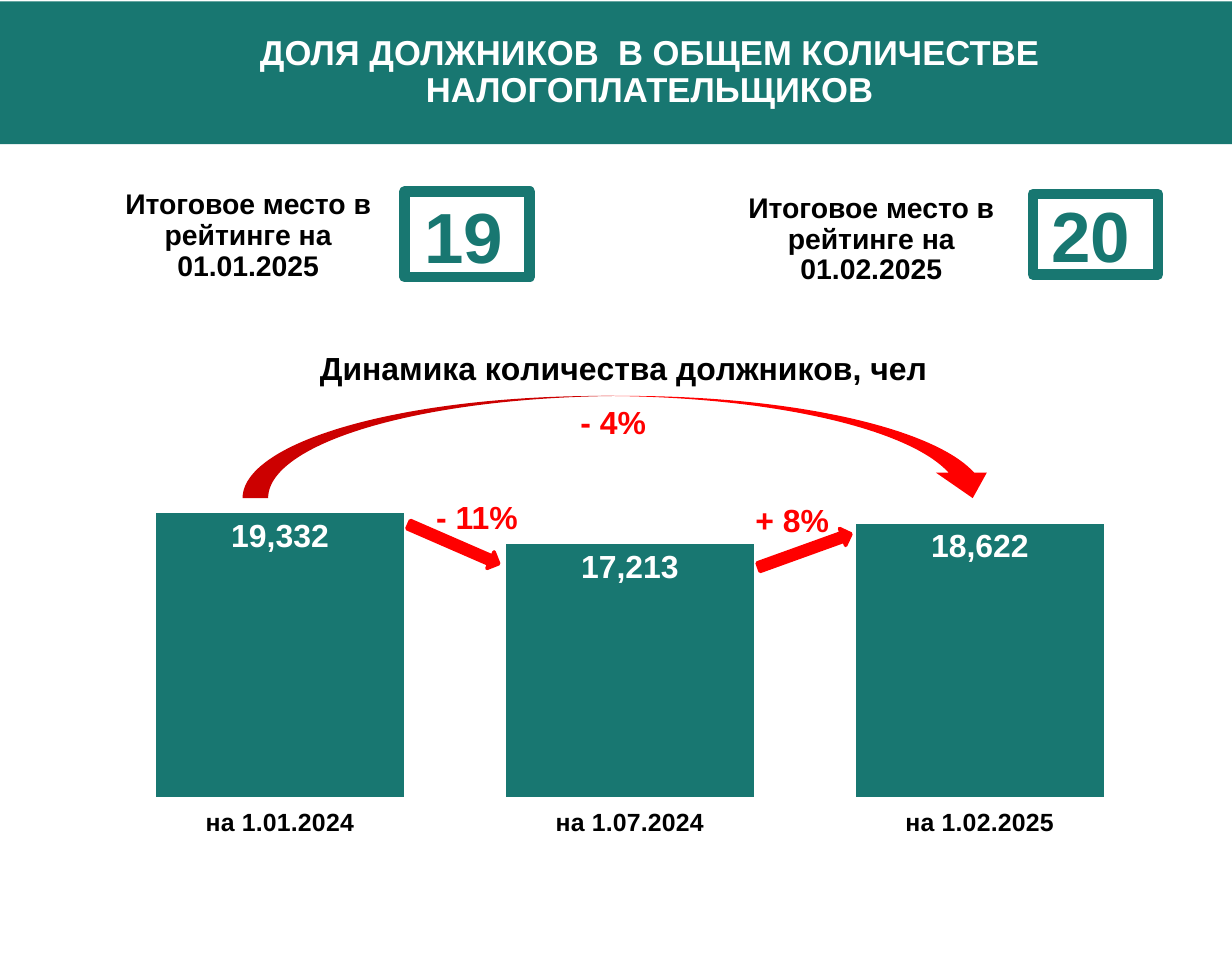
from dataclasses import dataclass

from pptx import Presentation
from pptx.chart.data import CategoryChartData as ChartData
from pptx.dml.color import RGBColor as Color
from pptx.enum.chart import XL_CHART_TYPE as ChartKind
from pptx.enum.chart import XL_LABEL_POSITION as LabelPlace
from pptx.enum.chart import XL_TICK_LABEL_POSITION as TickLabels
from pptx.enum.chart import XL_TICK_MARK as TickMark
from pptx.enum.shapes import MSO_SHAPE as Preset
from pptx.enum.text import MSO_ANCHOR as Anchor
from pptx.enum.text import PP_ALIGN as Align
from pptx.oxml import parse_xml
from pptx.oxml.ns import nsdecls, qn
from pptx.util import Pt


@dataclass(frozen=True)
class Theme:
    font: str = "Arial"
    teal: Color = Color(0x18, 0x77, 0x71)
    red: Color = Color(0xFF, 0, 0)
    black: Color = Color(0, 0, 0)
    white: Color = Color(0xFF, 0xFF, 0xFF)
    heading: float = 19.5
    caption: float = 16
    rank: float = 40
    label: float = 18
    axis: float = 14


class SlideBuilder:
    def __init__(self, page, theme):
        self.page = page
        self.theme = theme

    def style_font(self, font, size, color):
        values = {"name": self.theme.font, "size": Pt(size), "bold": True}
        for name, value in values.items():
            setattr(font, name, value)
        font.color.rgb = color

    def text(self, place, words, size, color, **frame_format):
        box = self.page.shapes.add_textbox(*map(Pt, place))
        frame = box.text_frame
        for name, value in {"word_wrap": True, **frame_format}.items():
            setattr(frame, name, value)
        para = frame.paragraphs[0]
        para.alignment = Align.CENTER
        span = para.add_run()
        span.text = words
        self.style_font(span.font, size, color)
        return para

    def caption(self, place, words, size, color):
        margins = {"margin_left": Pt(5), "margin_right": Pt(5),
                   "margin_top": Pt(3), "margin_bottom": Pt(3)}
        para = self.text(place, words, size, color,
                         vertical_anchor=Anchor.MIDDLE, **margins)
        para.line_spacing = 0.9

    def shape(self, preset, place, fill=None, line=None, width=0, angle=0):
        item = self.page.shapes.add_shape(preset, *map(Pt, place))
        item.shadow.inherit = False
        item.rotation = angle
        if fill is None:
            item.fill.background()
        else:
            item.fill.solid()
            item.fill.fore_color.rgb = fill
        if line is None:
            item.line.fill.background()
        else:
            item.line.color.rgb = line
            item.line.width = Pt(width)

    def layout(self, parent, index, **sizes):
        old = parent.find(qn("c:layout"))
        if old is not None:
            parent.remove(old)
        modes = '<c:xMode val="edge"/><c:yMode val="edge"/>'
        target = '<c:layoutTarget val="inner"/>' if "w" in sizes else ""
        values = "".join(f'<c:{key} val="{value}"/>' for key, value in sizes.items())
        parent.insert(index, parse_xml(
            f'<c:layout {nsdecls("c")}><c:manualLayout>{target}{modes}{values}'
            "</c:manualLayout></c:layout>"))

    def column_chart(self, place, title, counts):
        theme = self.theme
        data = ChartData(number_format="#,##0")
        data.categories = list(counts)
        data.add_series("Должники", list(counts.values()))
        chart = self.page.shapes.add_chart(
            ChartKind.COLUMN_CLUSTERED, *map(Pt, place), data).chart
        chart.has_legend = False
        chart.font.name = theme.font
        chart.font.size = Pt(10)

        # Title and plot area
        para = chart.chart_title.text_frame.paragraphs[0]
        span = para.add_run()
        span.text = title
        self.style_font(span.font, theme.label, theme.black)
        self.layout(chart.chart_title.element, 1, x=0.21, y=0.08)
        plot_area = chart.element.find(qn("c:chart")).find(qn("c:plotArea"))
        self.layout(plot_area, 0, x=0.018, y=0.357, w=0.964, h=0.462)

        # Axes
        values = {"minimum_scale": 0, "maximum_scale": 19400, "visible": False,
                  "has_major_gridlines": False}
        for name, value in values.items():
            setattr(chart.value_axis, name, value)
        dates = chart.category_axis
        values = {"major_tick_mark": TickMark.NONE, "minor_tick_mark": TickMark.NONE,
                  "tick_label_position": TickLabels.LOW}
        for name, value in values.items():
            setattr(dates, name, value)
        dates.format.line.fill.background()
        self.style_font(dates.tick_labels.font, theme.axis, theme.black)

        # Columns and their labels
        plot = chart.plots[0]
        plot.gap_width = 41
        plot.vary_by_categories = False
        columns = plot.series[0]
        columns.format.fill.solid()
        columns.format.fill.fore_color.rgb = theme.teal
        values = {"show_value": True, "position": LabelPlace.INSIDE_END,
                  "number_format": "#,##0", "number_format_is_linked": False}
        for name, value in values.items():
            setattr(columns.data_labels, name, value)
        self.style_font(columns.data_labels.font, theme.label, theme.white)


def main():
    deck = Presentation()
    deck.slide_width, deck.slide_height = Pt(694.8), Pt(540)
    theme = Theme()
    builder = SlideBuilder(deck.slides.add_slide(deck.slide_layouts[6]), theme)

    # Banner
    builder.shape(Preset.RECTANGLE, (0, 0.7, 694.8, 80.6), fill=theme.teal)

    # Debtor counts
    builder.column_chart(
        (48.2, 164.9, 614.2, 347), "Динамика количества должников, чел",
        {"на 1.01.2024": 19332, "на 1.07.2024": 17213, "на 1.02.2025": 18622})

    # Heading
    builder.caption((51.1, 18, 630.7, 46),
                    "ДОЛЯ ДОЛЖНИКОВ  В ОБЩЕМ КОЛИЧЕСТВЕ НАЛОГОПЛАТЕЛЬЩИКОВ",
                    theme.heading, theme.white)

    # Rating places: date, rank, caption, number and frame
    ratings = [
        ("01.01.2025", "19", (51.1, 110.2, 177.8, 46), (226, 105.1, 71, 55.4),
         (228.2, 108, 70.6, 48.2)),
        ("01.02.2025", "20", (400.3, 112.3, 182.2, 46), (579.6, 104.4, 71, 55.4),
         (582.5, 109.4, 70.6, 45.4)),
    ]
    for date, rank, caption, number, frame in ratings:
        builder.caption(caption, f"Итоговое место в рейтинге на {date}",
                        theme.caption, theme.black)
        builder.text(number, rank, theme.rank, theme.teal)
        builder.shape(Preset.RECTANGLE, frame, line=theme.teal, width=6)

    # Change over the whole period
    builder.shape(Preset.CURVED_DOWN_ARROW, (136.8, 223.2, 426.2, 57.6),
                  fill=theme.red)
    builder.text((303.8, 223.2, 84.2, 28.8), "- 4%", theme.label, theme.red)

    # Changes between neighbouring dates
    steps = [("- 11%", (226.1, 277.2), (228.2, 301.7), 23.5),
             ("+ 8%", (403.9, 278.6), (426.2, 305.3), 340.2)]
    for change, label, arrow, angle in steps:
        builder.text((*label, 85.7, 28.8), change, theme.label, theme.red)
        builder.shape(Preset.RIGHT_ARROW, (*arrow, 55.4, 10.1), fill=theme.red,
                      line=theme.red, width=2, angle=angle)

    deck.save("out.pptx")


if __name__ == "__main__":
    main()
